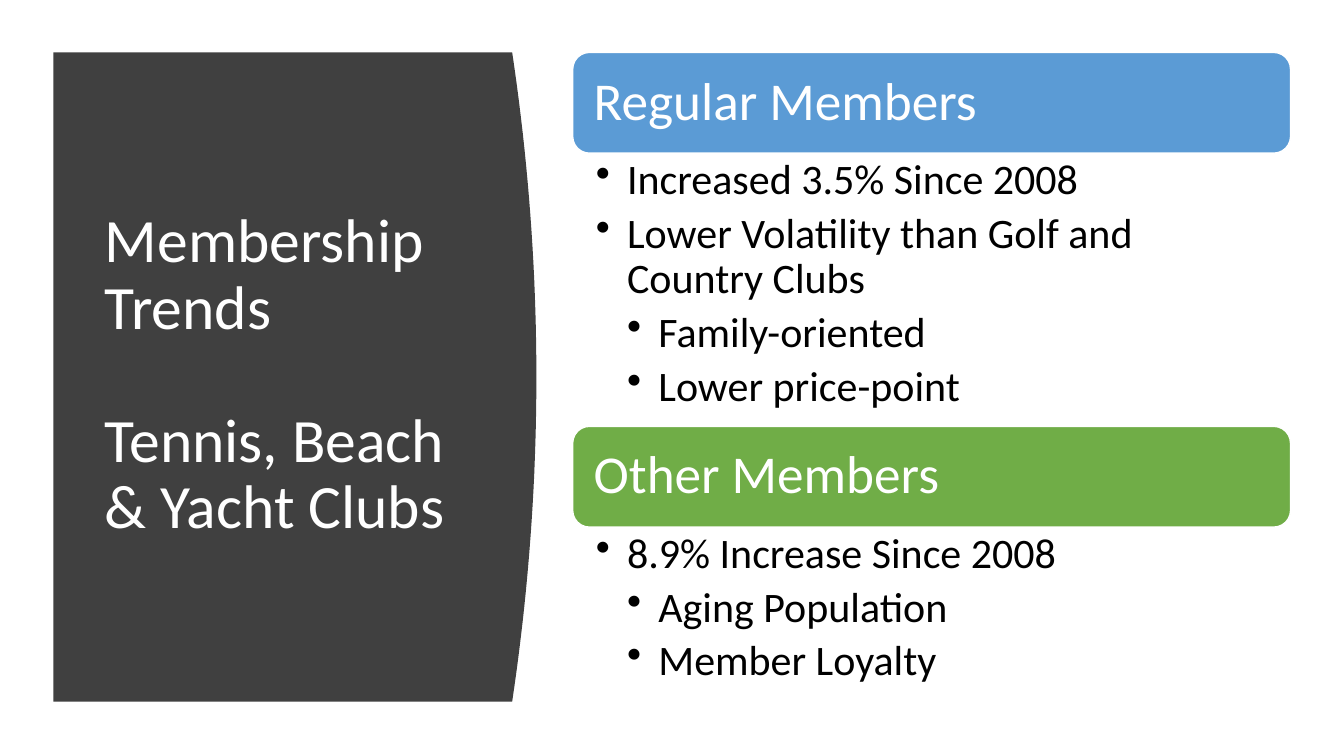
import pptx
import pptx.util
import pptx.dml.color
import pptx.enum.shapes
import pptx.enum.text
import lxml.etree
import pptx.oxml.ns

Inches = pptx.util.Inches
Pt = pptx.util.Pt
RGBColor = pptx.dml.color.RGBColor
ANCHOR = pptx.enum.text.MSO_ANCHOR
SHAPE = pptx.enum.shapes.MSO_SHAPE

WHITE = RGBColor(0xFF, 0xFF, 0xFF)
BLACK = RGBColor(0, 0, 0)
DARK = RGBColor(0x40, 0x40, 0x40)
BLUE = RGBColor(0x5B, 0x9B, 0xD5)
GREEN = RGBColor(0x70, 0xAD, 0x47)

FONT = "Calibri"
INDENT = 0.31
HEAD_TALL = 1.0

GROUPS = [
    ("Regular Members", BLUE, 0.52, 2.71, [
        (1, "Increased 3.5% Since 2008"),
        (1, "Lower Volatility than Golf and Country Clubs"),
        (2, "Family-oriented"),
        (2, "Lower price-point"),
    ]),
    ("Other Members", GREEN, 4.23, 1.72, [
        (1, "8.9% Increase Since 2008"),
        (2, "Aging Population"),
        (2, "Member Loyalty"),
    ]),
]


def style(para, size, color):
    para.line_spacing = 0.9
    para.alignment = pptx.enum.text.PP_ALIGN.LEFT
    for run in para.runs:
        run.font.name = FONT
        run.font.size = Pt(size)
        run.font.color.rgb = color


def set_frame(frame, anchor, left, top, right, bottom):
    frame.word_wrap = True
    frame.auto_size = pptx.enum.text.MSO_AUTO_SIZE.NONE
    frame.vertical_anchor = anchor
    frame.margin_left, frame.margin_top = Inches(left), Inches(top)
    frame.margin_right, frame.margin_bottom = Inches(right), Inches(bottom)


def add_bullet(para, level):
    props = para._p.get_or_add_pPr()
    props.set("marL", str(Inches(INDENT * level)))
    props.set("indent", str(-Inches(INDENT)))
    mark = lxml.etree.SubElement(props, pptx.oxml.ns.qn("a:buChar"))
    mark.set("char", "•")


def add_panel(slide, left, top, width, height, bulge=0.24, steps=40):
    """Draw a block whose right edge bows outward as a parabola."""
    points = []
    for step in range(steps + 1):
        pos = step / steps
        edge = left + width - bulge * (2 * pos - 1) ** 2
        points.append((Inches(edge), Inches(top + height * pos)))
    points.append((Inches(left), Inches(top + height)))
    build = slide.shapes.build_freeform(Inches(left), Inches(top))
    build.add_line_segments(points, close=True)
    panel = build.convert_to_shape()
    panel.shadow.inherit = False
    panel.fill.solid()
    panel.fill.fore_color.rgb = DARK
    panel.line.fill.background()


def set_title(slide, left, top, width, height):
    title = slide.shapes.title
    title.left, title.top = Inches(left), Inches(top)
    title.width, title.height = Inches(width), Inches(height)
    set_frame(title.text_frame, ANCHOR.MIDDLE, 0.1, 0.05, 0.1, 0.05)
    para = title.text_frame.paragraphs[0]
    para.text = "Membership Trends\v\vTennis, Beach & Yacht Clubs"
    style(para, 44, WHITE)
    # Line breaks carry their own size, which sets the height of the gap.
    for gap in para._p.findall(pptx.oxml.ns.qn("a:br")):
        props = lxml.etree.SubElement(gap, pptx.oxml.ns.qn("a:rPr"))
        props.set("sz", "4400")
    # Bring the title in front of the panel.
    slide.shapes._spTree.append(title._element)


def add_head(slide, text, color, left, top, width, height):
    head = slide.shapes.add_shape(
        SHAPE.ROUNDED_RECTANGLE,
        Inches(left), Inches(top), Inches(width), Inches(height))
    head.shadow.inherit = False
    head.fill.solid()
    head.fill.fore_color.rgb = color
    head.line.color.rgb = WHITE
    head.line.width = Pt(1)
    set_frame(head.text_frame, ANCHOR.MIDDLE, 0.16, 0.16, 0.16, 0.16)
    head.text_frame.text = text
    style(head.text_frame.paragraphs[0], 38, WHITE)


def add_list(slide, items, left, top, width, height):
    box = slide.shapes.add_textbox(
        Inches(left), Inches(top), Inches(width), Inches(height))
    frame = box.text_frame
    set_frame(frame, ANCHOR.TOP, 0.23, 0.05, 0.3, 0.05)
    frame.text = "\n".join(text for level, text in items)
    for para, (level, text) in zip(frame.paragraphs, items):
        para.level = level
        style(para, 30, BLACK)
        para.space_before = Pt(0)
        para.space_after = Pt(6)
        add_bullet(para, level)


def add_group(slide, group, left, width):
    text, color, top, height, items = group
    add_head(slide, text, color, left, top, width, HEAD_TALL)
    add_list(slide, items, left, top + HEAD_TALL, width, height)


def main():
    deck = pptx.Presentation()
    deck.slide_width, deck.slide_height = Inches(13.33), Inches(7.5)
    slide = deck.slides.add_slide(deck.slide_layouts.get_by_name("Title Only"))
    add_panel(slide, 0.53, 0.52, 4.79, 6.44)
    set_title(slide, 0.94, 1.11, 3.74, 5.24)
    for group in GROUPS:
        add_group(slide, group, 5.68, 7.12)
    deck.save("out.pptx")


if __name__ == "__main__":
    main()
